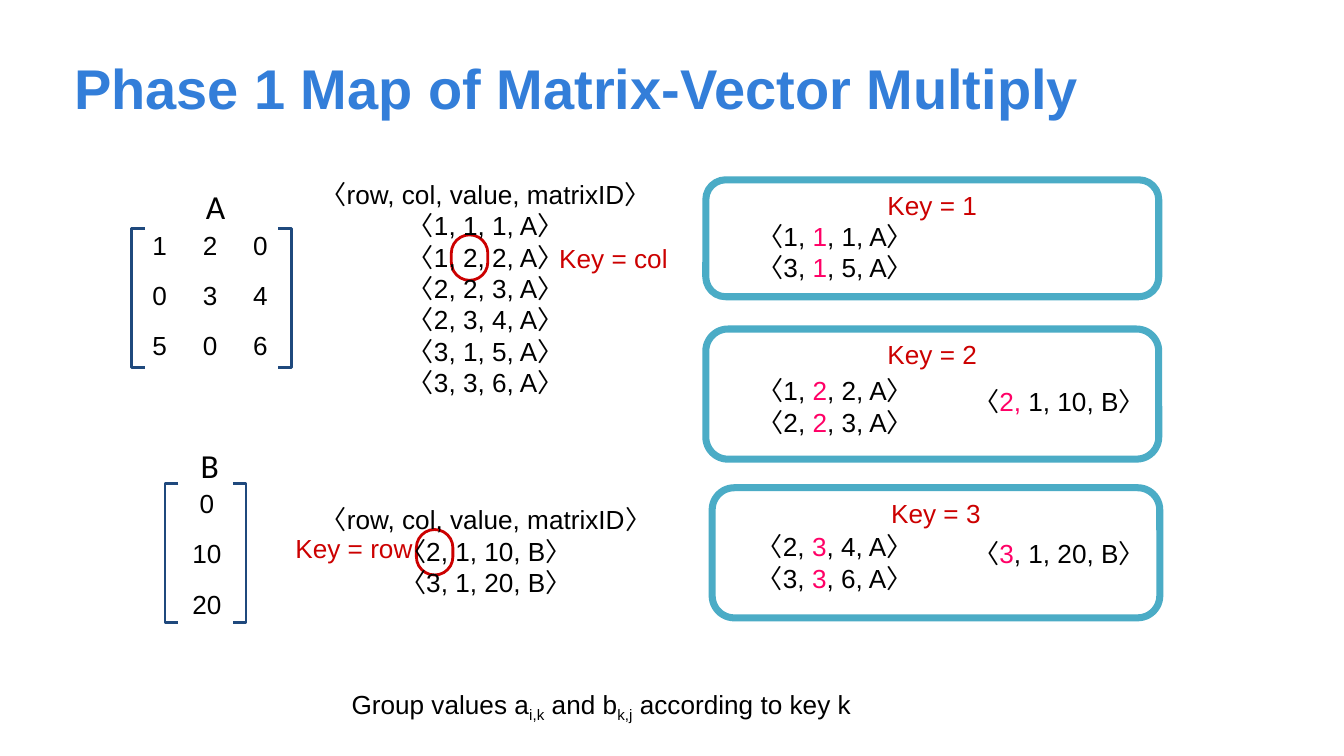
from dataclasses import dataclass

from lxml.etree import SubElement
from pptx import Presentation
from pptx.dml.color import RGBColor
from pptx.enum.shapes import MSO_SHAPE as Shp
from pptx.enum.text import MSO_ANCHOR as Anchor, MSO_AUTO_SIZE as AutoSize, PP_ALIGN as Align
from pptx.oxml.ns import qn
from pptx.util import Cm, Pt

COLORS = {
    "title": "337ED9", "text": "000000", "key": "CC0000", "match": "FF0066",
    "card": "4BACC6", "bracket": "1F497D", "white": "FFFFFF",
}
CELL = 0.96
PITCH = 0.95
BRACKET_H = 2.63
BRACKET_TIP = 0.25


@dataclass
class Box:
    x: float
    y: float
    w: float
    h: float


@dataclass
class Style:
    size: float = 14
    font: str = "Arial"
    color: str = "text"
    bold: bool = False
    align: Align = Align.CENTER
    anchor: Anchor = Anchor.TOP
    inset: float = 0.13
    spacing: float = 0.9
    grow: bool = False
    subscript: bool = False


@dataclass
class Label:
    box: Box
    lines: list[str]
    style: Style


@dataclass
class Card:
    box: Box
    title: str


@dataclass
class Matrix:
    name: str
    heading: Box
    rows: list[list[str]]
    x: float
    y: float
    bracket_left: float
    bracket_right: float
    bracket_top: float


TITLE = Style(30, color="title", bold=True, align=Align.LEFT,
              anchor=Anchor.MIDDLE, spacing=1)
FOOTER = Style(spacing=1, subscript=True)
KEY = Style(color="key")
KEY_LEFT = Style(color="key", align=Align.LEFT)
KEY_RIGHT = Style(color="key", align=Align.RIGHT)
NUMBER = Style(anchor=Anchor.MIDDLE)
NAME = Style(18, font="Calibri")
TUPLES = Style(inset=0.25, spacing=1, grow=True)

CARDS = [
    Card(Box(13.34, 6.22, 8.56, 2.46), "Key = 2"),
    Card(Box(13.46, 9.22, 8.46, 2.46), "Key = 3"),
    Card(Box(13.34, 3.4, 8.56, 2.21), "Key = 1"),
]
RINGS = [Box(7.87, 10.01, 0.69, 0.86), Box(8.53, 4.44, 0.69, 0.86)]
MATRICES = [
    Matrix("A", Box(2.64, 3.48, 2.87, 0.71),
           [["1", "2", "0"], ["0", "3", "4"], ["5", "0", "6"]],
           2.54, 4.19, 2.49, 5.51, 4.32),
    Matrix("B", Box(3.33, 8.36, 1.27, 0.71), [["0"], ["10"], ["20"]],
           3.43, 9.07, 3.12, 4.65, 9.14),
]
HEADER = "〈row, col, value, matrixID〉"
# Text between asterisks is the accented part of a line.
LABELS = [
    Label(Box(1.27, 0.33, 22.86, 2.62), ["Phase 1 Map of Matrix-Vector Multiply"], TITLE),
    Label(Box(4.42, 10.01, 3.51, 0.71), ["Key = row"], KEY_RIGHT),
    Label(Box(10.44, 4.52, 3.25, 0.71), ["Key = col"], KEY_LEFT),
    Label(Box(5.46, 3.12, 7.44, 4.7),
          [HEADER, "〈1, 1, 1, A〉", "〈1, 2, 2, A〉", "〈2, 2, 3, A〉",
           "〈2, 3, 4, A〉", "〈3, 1, 5, A〉", "〈3, 3, 6, A〉"], TUPLES),
    Label(Box(5.64, 9.27, 7.09, 2.31),
          [HEADER, "〈2, 1, 10, B〉", "〈3, 1, 20, B〉"], TUPLES),
    Label(Box(13.46, 3.91, 4.65, 1.7), ["〈1, *1*, 1, A〉", "〈3, *1*, 5, A〉"], TUPLES),
    Label(Box(13.69, 6.83, 4.19, 1.7), ["〈1, *2*, 2, A〉", "〈2, *2*, 3, A〉"], TUPLES),
    Label(Box(18.11, 7.04, 3.81, 1.12), ["〈*2,* 1, 10, B〉"], TUPLES),
    Label(Box(13.87, 9.78, 3.81, 1.7), ["〈2, *3*, 4, A〉", "〈3, *3*, 6, A〉"], TUPLES),
    Label(Box(18.11, 9.91, 3.81, 1.12), ["〈*3*, 1, 20, B〉"], TUPLES),
]


def rgb(name: str) -> RGBColor:
    return RGBColor.from_string(COLORS[name])


def place(box: Box) -> tuple:
    return Cm(box.x), Cm(box.y), Cm(box.w), Cm(box.h)


def write(sp, lines: list[str], style: Style) -> None:
    tf = sp.text_frame
    inset = Cm(style.inset)
    frame = {"word_wrap": True, "vertical_anchor": style.anchor,
             "auto_size": AutoSize.SHAPE_TO_FIT_TEXT if style.grow else AutoSize.NONE,
             "margin_left": inset, "margin_right": inset,
             "margin_top": inset, "margin_bottom": inset}
    for name, value in frame.items():
        setattr(tf, name, value)
    for i, line in enumerate(lines):
        p = tf.add_paragraph() if i else tf.paragraphs[0]
        p.alignment, p.line_spacing = style.align, style.spacing
        for j, part in enumerate(line.split("*")):
            if not part:
                continue
            r = p.add_run()
            r.text = part
            fmt = {"size": Pt(style.size), "name": style.font, "bold": style.bold}
            for name, value in fmt.items():
                setattr(r.font, name, value)
            accent = j % 2 == 1
            r.font.color.rgb = rgb("match" if accent and not style.subscript else style.color)
            if accent and style.subscript:
                r.font._element.set("baseline", "-25000")


def add_label(shapes, label: Label):
    sp = shapes.add_textbox(*place(label.box))
    write(sp, label.lines, label.style)
    return sp


def outline(sp, color: str, width: float) -> None:
    sp.shadow.inherit = False
    sp.line.color.rgb = rgb(color)
    sp.line.width = Pt(width)


def add_round_rect(shapes, box: Box, radius: float, color: str, width: float):
    sp = shapes.add_shape(Shp.ROUNDED_RECTANGLE, *place(box))
    sp.adjustments[0] = radius
    outline(sp, color, width)
    return sp


def add_card(shapes, card: Card) -> None:
    sp = add_round_rect(shapes, card.box, 0.17, "card", 3.77)
    sp.fill.solid()
    sp.fill.fore_color.rgb = rgb("white")
    write(sp, [card.title], KEY)


def add_bracket(shapes, x: float, y: float, tip: float) -> None:
    """Draw a square bracket with its spine at x; the sign of tip gives its side."""
    fb = shapes.build_freeform(Cm(x + tip), Cm(y))
    fb.add_line_segments([(Cm(x), Cm(y)), (Cm(x), Cm(y + BRACKET_H)),
                          (Cm(x + tip), Cm(y + BRACKET_H))], close=False)
    sp = fb.convert_to_shape()
    sp.fill.background()
    outline(sp, "bracket", 1.5)


def add_matrix(shapes, m: Matrix) -> None:
    add_bracket(shapes, m.bracket_left, m.bracket_top, BRACKET_TIP)
    add_bracket(shapes, m.bracket_right, m.bracket_top, -BRACKET_TIP)
    add_label(shapes, Label(m.heading, [m.name], NAME))
    for i, row in enumerate(m.rows):
        for j, number in enumerate(row):
            box = Box(m.x + j * PITCH, m.y + i * PITCH, CELL, CELL)
            add_label(shapes, Label(box, [number], NUMBER))


def main() -> None:
    prs = Presentation()
    prs.slide_width, prs.slide_height = Cm(25.4), Cm(14.29)
    shapes = prs.slides.add_slide(prs.slide_layouts[6]).shapes
    for card in CARDS:
        add_card(shapes, card)
    for ring in RINGS:
        add_round_rect(shapes, ring, 0.5, "key", 1.5).fill.background()
    for matrix in MATRICES:
        add_matrix(shapes, matrix)
    for label in LABELS:
        add_label(shapes, label)
    footer = add_label(shapes, Label(
        Box(2.08, 12.88, 17.3, 0.86),
        ["Group values a*i,k* and b*k,j* according to key k"], FOOTER))
    pPr = footer.text_frame.paragraphs[0]._p.get_or_add_pPr()
    pPr.set("marL", str(Cm(1.27)))
    pPr.set("indent", "0")
    prs.save("out.pptx")


if __name__ == "__main__":
    main()
